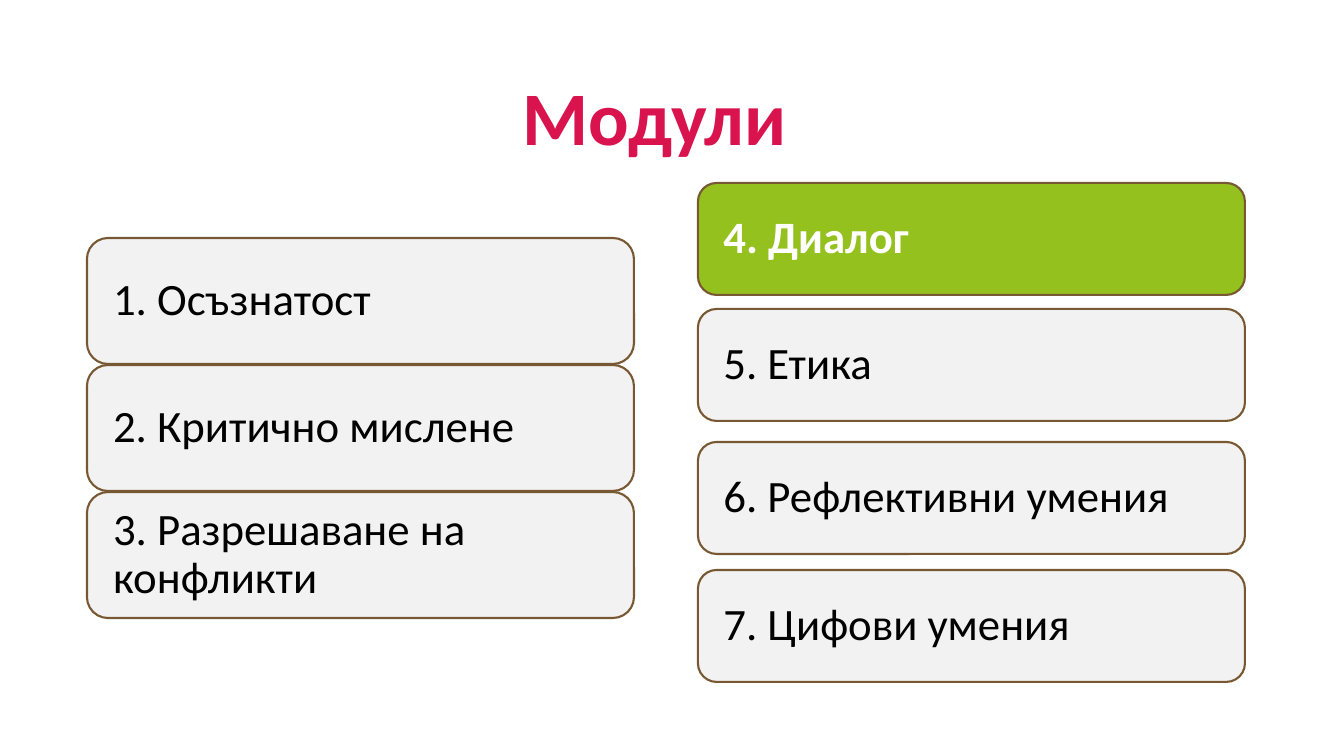
"""Builds the slide that lists the seven training modules in two columns."""
from pptx import Presentation
from pptx.dml.color import RGBColor
from pptx.enum.shapes import MSO_SHAPE
from pptx.enum.text import MSO_ANCHOR, MSO_AUTO_SIZE, PP_ALIGN
from pptx.util import Pt

TITLE = "Модули"
CURRENT = "4. Диалог"
COLUMNS = [
    {"left": 87, "height": 126, "modules": [
        ("1. Осъзнатост", 238),
        ("2. Критично мислене", 365),
        ("3. Разрешаване на конфликти", 492),
    ]},
    {"left": 698, "height": 112, "modules": [
        (CURRENT, 183),
        ("5. Етика", 309),
        ("6. Рефлективни умения", 442),
        ("7. Цифови умения", 570),
    ]},
]
COLORS = {"title": "D8134D", "card": "F2F2F2", "current": "95C11F",
          "border": "785832", "text": "000000", "current_text": "FFFFFF"}
FONT = "Calibri"
CARD_WIDTH, CARD_INSET = 547, 20


def px(length):
    return round(length * 914400 / 100.8)


def color(name):
    return RGBColor.from_string(COLORS[name])


def set_text(shape, text, size, text_color, bold, align, anchor):
    frame = shape.text_frame
    frame.text = text
    frame.word_wrap = True
    frame.auto_size = MSO_AUTO_SIZE.NONE
    frame.vertical_anchor = anchor
    paragraph = frame.paragraphs[0]
    paragraph.alignment = align
    paragraph.line_spacing = 0.9
    paragraph.font.name = FONT
    paragraph.font.size = Pt(size)
    paragraph.font.bold = bold
    paragraph.font.color.rgb = color(text_color)


def add_card(slide, module, left, top, height):
    current = module == CURRENT
    card = slide.shapes.add_shape(MSO_SHAPE.ROUNDED_RECTANGLE,
                                  px(left), px(top), px(CARD_WIDTH), px(height))
    card.shadow.inherit = False
    card.fill.solid()
    card.fill.fore_color.rgb = color("current" if current else "card")
    card.line.color.rgb = color("border")
    card.line.width = Pt(1.5)
    frame = card.text_frame
    frame.margin_left = frame.margin_right = px(CARD_INSET)
    frame.margin_top = frame.margin_bottom = 0
    set_text(card, module, 32, "current_text" if current else "text",
             current, PP_ALIGN.LEFT, MSO_ANCHOR.MIDDLE)


def main():
    deck = Presentation()
    deck.slide_width, deck.slide_height = px(1344), px(756)
    slide = deck.slides.add_slide(deck.slide_layouts[5])
    title = slide.shapes.title
    title.left, title.top, title.width, title.height = map(px, (1, -30, 1307, 197))
    set_text(title, TITLE, 54, "title", True, PP_ALIGN.CENTER, MSO_ANCHOR.BOTTOM)
    for column in COLUMNS:
        for module, top in column["modules"]:
            add_card(slide, module, column["left"], top, column["height"])
    deck.save("out.pptx")


if __name__ == "__main__":
    main()
